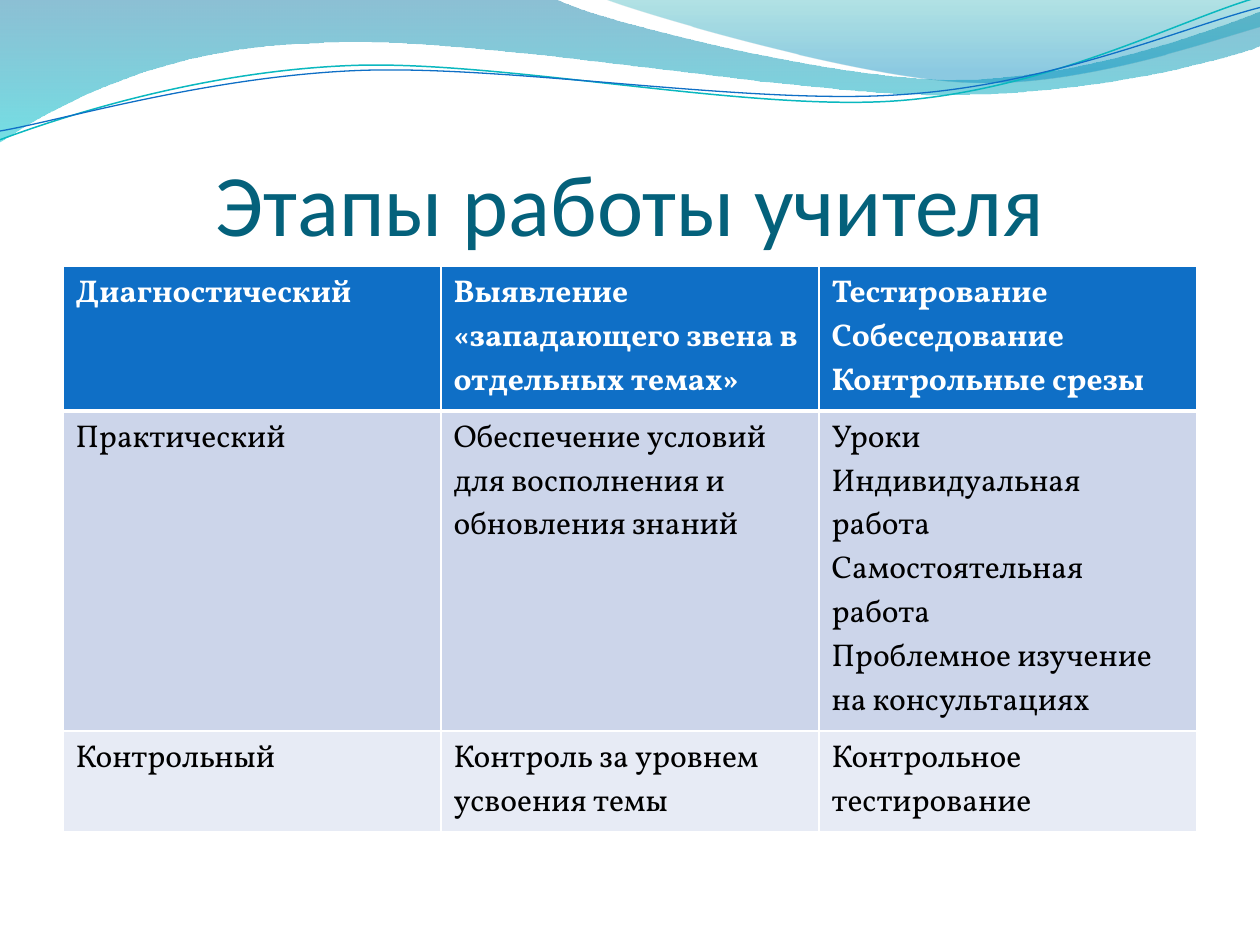
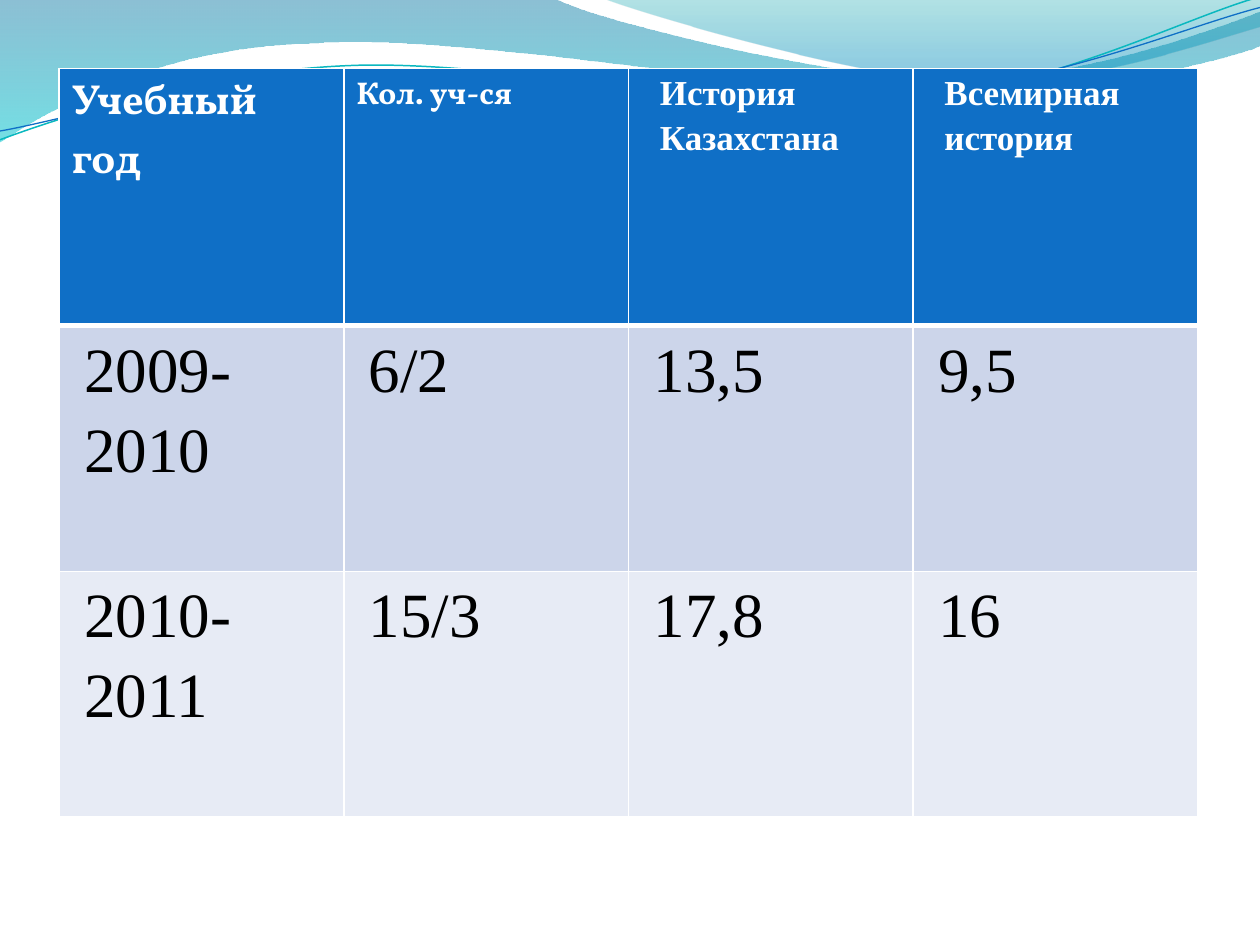
"""Build two slides on a teacher's work stages and exam results under a shared wave band."""
from dataclasses import dataclass
from typing import Optional

from lxml.etree import SubElement
from pptx import Presentation
from pptx.dml.color import RGBColor as Rgb
from pptx.enum.text import MSO_ANCHOR as Anchor, MSO_AUTO_SIZE as AutoSize, PP_ALIGN as Align
from pptx.oxml.ns import qn
from pptx.slide import Slide
from pptx.util import Emu, Inches, Pt

SLIDE_WIDTH, SLIDE_HEIGHT = Inches(10), Inches(7.5)
GRID_COLUMNS = 100
CELL = SLIDE_WIDTH // GRID_COLUMNS
FIRST_WAVE_ID = 20
WAVE_TILT = 357.3

COLORS = {
    "title": "04617B", "header": "0F6FC6", "odd_row": "CCD5EA", "even_row": "E7EBF5",
    "white": "FFFFFF", "black": "000000", "teal_line": "0AB8BF", "blue_line": "0F6FC6",
    "deep_blue": "0074A1", "aqua": "00C6CF", "sea": "00A1A9", "sky": "008BBF",
}


@dataclass(frozen=True)
class GradientEnd:
    """Hold one end of a wave's gradient; position and opacity are shares."""
    position: float
    color: str
    opacity: float


@dataclass(frozen=True)
class Wave:
    """Describe a wave by straight (2 numbers) and curved (6 numbers) steps in grid cells."""
    start: tuple[float, float]
    steps: tuple[tuple[float, ...], ...]
    gradient: tuple[GradientEnd, ...] = ()
    line: str = ""
    weight: float = 0


@dataclass(frozen=True)
class CellStyle:
    """Hold the type and spacing of a table cell; insets and indent in grid cells."""
    font: str
    size: float
    side_inset: float = 1
    end_inset: float = 0.5
    indent: float = 0
    line_spacing: Optional[float] = None
    space_after: Optional[float] = None


@dataclass(frozen=True)
class Entry:
    """Pair the paragraphs of a cell with their style."""
    style: CellStyle
    lines: tuple[str, ...]


@dataclass(frozen=True)
class Grid:
    """Place a table, in grid cells, and list its entries row by row."""
    left: float
    top: float
    width: float
    height: float
    row_heights: tuple[float, ...]
    entries: tuple[tuple[Entry, ...], ...]


def indented(size: float, side_inset: float) -> CellStyle:
    """Return the loosely spaced, indented style of the results table."""
    return CellStyle("Times New Roman", size, side_inset, 0, 1.3, 1.15, 10)


STAGE = CellStyle("Vollkorn", 18)
YEAR_HEADING = CellStyle("Vollkorn", 24)
SUBJECT_HEADING = indented(20, 1.2)
RESULT = indented(36, 0.7)

WAVES = (
    Wave((0, 0), ((44, -0.1), (47.6, 1.7, 66.4, 6.3, 75.8, 6.3), (85.3, 6.3, 95.8, 2.6, 100, 0.9),
                  (100.1, 3.6), (98.3, 4.4, 87, 7.6, 74.6, 7.5),
                  (62.2, 7.5, 38.2, 2.8, 25.7, 3.4), (12.9, 3.6, 4.6, 8.3, -0.1, 11.3), (0, 0)),
         gradient=(GradientEnd(0, "deep_blue", 0.45), GradientEnd(1, "aqua", 0.55))),
    Wave((47.9, -0.1), ((50.9, 1.1, 68.2, 6.2, 76.9, 6.5), (85.6, 6.9, 96.1, 3.2, 100, 2.1),
                        (100, 0), (47.9, -0.1)),
         gradient=(GradientEnd(0, "sea", 0.3), GradientEnd(0.8, "sky", 0.45))),
    Wave((-0.2, 8.74), ((4.7, 7.17, 15.84, 4.09, 27.75, 4.16), (39.56, 4.21, 59.14, 9.34, 71.17, 9),
                        (83.2, 8.67, 93.95, 3.57, 100.03, 2.16)), line="teal_line", weight=0.85),
    Wave((-0.16, 8.04), ((4.58, 7.47, 16.43, 4.52, 28.34, 4.58),
                         (40.35, 4.65, 59.57, 8.86, 71.6, 8.52),
                         (83.53, 8.29, 94.23, 4.18, 100.2, 2.96)), line="blue_line", weight=0.75),
)

STAGES = Grid(5, 21.15, 90, 33, (6.4,) * 3, tuple(
    tuple(Entry(STAGE, lines) for lines in row) for row in (
        (("Диагностический",),
         ("Выявление «западающего звена в отдельных темах»",),
         ("Тестирование", "Собеседование", "Контрольные срезы")),
        (("Практический",),
         ("Обеспечение условий для восполнения и обновления знаний",),
         ("Уроки", "Индивидуальная работа", "Самостоятельная работа",
          "Проблемное изучение на консультациях")),
        (("Контрольный",),
         ("Контроль за уровнем усвоения темы",),
         ("Контрольное тестирование",)),
    )))

RESULTS = Grid(4.7, 5.45, 90.35, 59.4, (20.4, 19.5, 19.5), (
    (Entry(YEAR_HEADING, ("Учебный год",)), Entry(STAGE, ("Кол. уч-ся",)),
     Entry(SUBJECT_HEADING, ("История Казахстана",)),
     Entry(SUBJECT_HEADING, ("Всемирная история",))),
    *(tuple(Entry(RESULT, (value,)) for value in row) for row in (
        ("2009-2010", "6/2", "13,5", "9,5"),
        ("2010-2011", "15/3", "17,8", "16"))),
))


def cells(count: float) -> Emu:
    """Turn a number of grid cells into a length."""
    return Emu(round(count * CELL))


def color(name: str) -> Rgb:
    """Look up a colour of the palette."""
    return Rgb.from_string(COLORS[name])


def bend(ribbon, wave: Wave) -> None:
    """Join the three straight segments of each curved step into one cubic curve."""
    segments = iter(list(ribbon._element.iter(qn("a:lnTo"))))
    for step in wave.steps:
        first = next(segments)
        if len(step) == 2:
            continue
        curve = SubElement(first.getparent(), qn("a:cubicBezTo"))
        first.addprevious(curve)
        for segment in (first, next(segments), next(segments)):
            curve.append(segment[0])
            segment.getparent().remove(segment)


def draw_wave(slide: Slide, wave: Wave):
    """Draw a filled wave or a thin wave line and return it."""
    points = [(cells(step[i]), cells(step[i + 1]))
              for step in wave.steps for i in range(0, len(step), 2)]
    builder = slide.shapes.build_freeform(*map(cells, wave.start))
    builder.add_line_segments(points, close=bool(wave.gradient))
    ribbon = builder.convert_to_shape()
    bend(ribbon, wave)
    ribbon.shadow.inherit = False
    if not wave.gradient:
        ribbon.rotation = WAVE_TILT
        ribbon.fill.background()
        ribbon.line.color.rgb = color(wave.line)
        ribbon.line.width = Pt(wave.weight)
        return ribbon
    ribbon.line.fill.background()
    ribbon.fill.gradient()
    ribbon.fill.gradient_angle = 270
    for stop, end in zip(ribbon.fill.gradient_stops, wave.gradient):
        stop.position = end.position
        stop.color.rgb = color(end.color)
    for tint, end in zip(ribbon._element.spPr.iter(qn("a:srgbClr")), wave.gradient):
        SubElement(tint, qn("a:alpha")).set("val", str(round(end.opacity * 100000)))
    return ribbon


def share_waves(deck: Presentation, slide: Slide) -> None:
    """Draw the wave band and move it to the master, so that every slide shows it."""
    tree = deck.slide_master.shapes.element
    for place, wave in enumerate(WAVES):
        band = draw_wave(slide, wave)._element
        band.nvSpPr.cNvPr.set("id", str(FIRST_WAVE_ID + place))
        tree.insert(2 + place, band)


def set_title(slide: Slide, wording: str) -> None:
    """Place and format the title placeholder."""
    title = slide.shapes.title
    title.left, title.top, title.width, title.height = map(cells, (5, 7.7, 90, 12.5))
    frame = title.text_frame
    frame.word_wrap, frame.auto_size = True, AutoSize.NONE
    frame.vertical_anchor = Anchor.BOTTOM
    frame.margin_left = frame.margin_right = frame.margin_bottom = 0
    frame.margin_top = cells(0.5)
    heading = frame.paragraphs[0]
    heading.alignment = Align.CENTER
    run = heading.add_run()
    run.text = wording
    run.font.name, run.font.size = "Calibri", Pt(50)
    run.font.color.rgb = color("title")


def set_borders(cell, top: float, bottom: float) -> None:
    """Give a table cell white borders, in points."""
    properties = cell._tc.get_or_add_tcPr()
    for place, (side, weight) in enumerate((("L", 1), ("R", 1), ("T", top), ("B", bottom))):
        edge = SubElement(properties, qn(f"a:ln{side}"), w=str(Pt(weight)))
        SubElement(SubElement(edge, qn("a:solidFill")), qn("a:srgbClr"), val=COLORS["white"])
        properties.insert(place, edge)


def fill_cell(cell, entry: Entry, is_header: bool) -> None:
    """Write the paragraphs of an entry into a table cell."""
    style = entry.style
    cell.margin_left = cell.margin_right = cells(style.side_inset)
    cell.margin_top = cell.margin_bottom = cells(style.end_inset)
    frame = cell.text_frame
    for index, line in enumerate(entry.lines):
        paragraph = frame.add_paragraph() if index else frame.paragraphs[0]
        if style.indent:
            paragraph._p.get_or_add_pPr().set("marL", str(cells(style.indent)))
        paragraph.line_spacing = style.line_spacing
        paragraph.space_after = None if style.space_after is None else Pt(style.space_after)
        run = paragraph.add_run()
        run.text = line
        run.font.name, run.font.size, run.font.bold = style.font, Pt(style.size), is_header
        run.font.color.rgb = color("white" if is_header else "black")


def draw_grid(slide: Slide, grid: Grid) -> None:
    """Draw a table with a header row and banded rows below it."""
    frame = slide.shapes.add_table(
        len(grid.entries), len(grid.entries[0]),
        *map(cells, (grid.left, grid.top, grid.width, grid.height)))
    fills = ("header", "odd_row", "even_row")
    for row_index, (row, height) in enumerate(zip(frame.table.rows, grid.row_heights)):
        row.height = cells(height)
        for cell, entry in zip(row.cells, grid.entries[row_index]):
            cell.fill.solid()
            cell.fill.fore_color.rgb = color(fills[row_index])
            fill_cell(cell, entry, row_index == 0)
            set_borders(cell, 3 if row_index == 1 else 1, 3 if row_index == 0 else 1)
    frame.height = cells(grid.height)


def main() -> None:
    """Build and save the deck."""
    deck = Presentation()
    deck.slide_width, deck.slide_height = SLIDE_WIDTH, SLIDE_HEIGHT
    title_only, blank = deck.slide_layouts[5], deck.slide_layouts[6]
    stages_slide = deck.slides.add_slide(title_only)
    share_waves(deck, stages_slide)
    set_title(stages_slide, "Этапы работы учителя")
    draw_grid(stages_slide, STAGES)
    draw_grid(deck.slides.add_slide(blank), RESULTS)
    deck.save("out.pptx")


if __name__ == "__main__":
    main()
